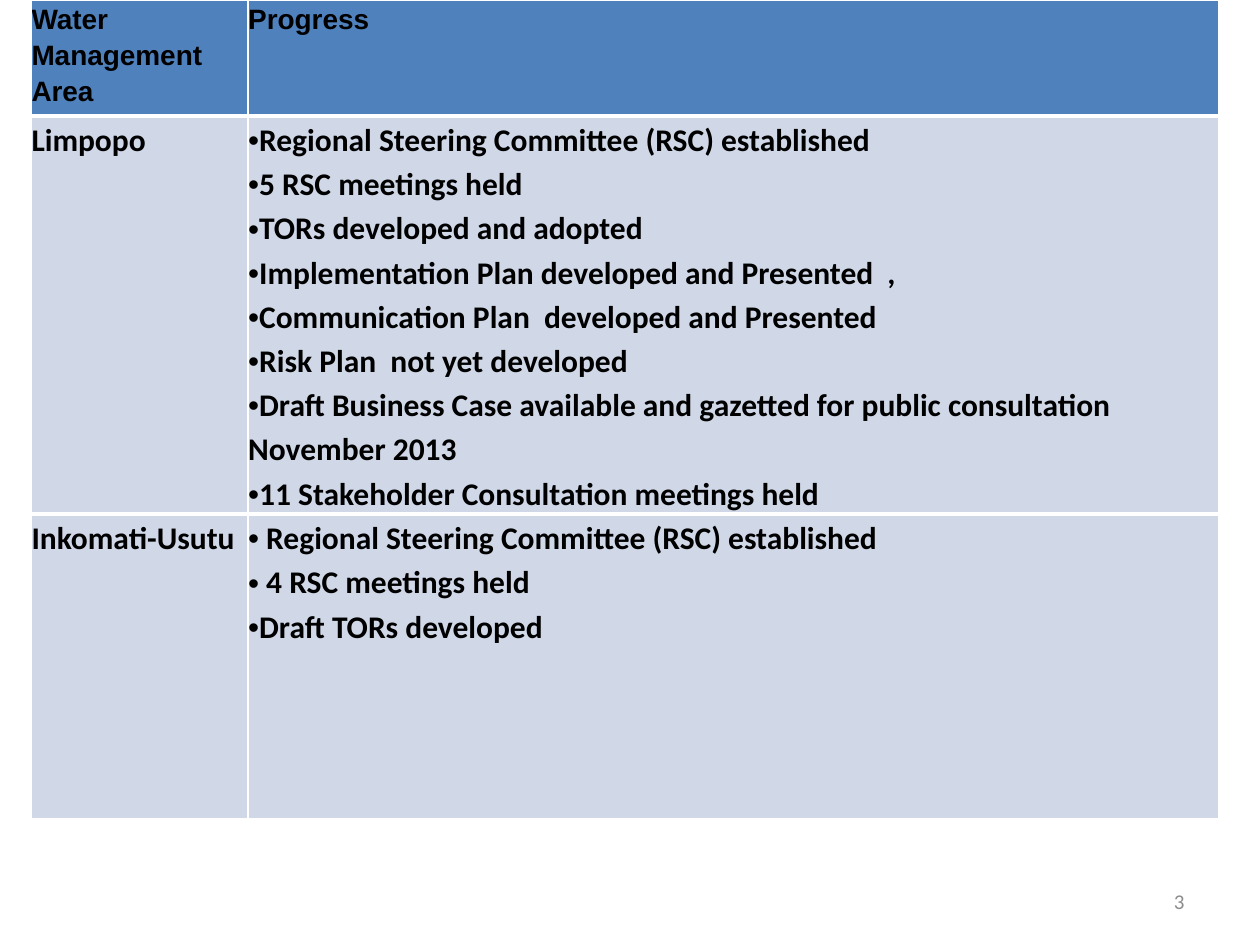
import pptx
import pptx.util
import pptx.dml.color
import pptx.enum.text
import pptx.oxml
import pptx.oxml.ns
from pptx.util import Inches

COLORS = {"header": "4F81BD", "body": "D0D8E8", "border": "FFFFFF",
          "text": "000000", "number": "8C8C8C"}
ROWS = [
    (["Water Management Area"], ["Progress"]),
    (["Limpopo"], [
        "Regional Steering Committee (RSC) established",
        "5 RSC meetings held",
        "TORs developed and adopted",
        "Implementation Plan developed and Presented  ,",
        "Communication Plan  developed and Presented",
        "Risk Plan  not yet developed",
        "Draft Business Case available and gazetted for public consultation November 2013",
        "11 Stakeholder Consultation meetings held",
    ]),
    (["Inkomati-Usutu"], [
        " Regional Steering Committee (RSC) established",
        " 4 RSC meetings held",
        "Draft TORs developed",
    ]),
]
COL_WIDTHS = [1.72, 7.7]
ROW_HEIGHTS = [0.85, 3.16, 2.43]


def format_run(r, font, size, color, bold):
    r.font.name = font
    r.font.size = pptx.util.Pt(size)
    r.font.bold = bold
    r.font.color.rgb = pptx.dml.color.RGBColor.from_string(COLORS[color])


def add_border(cell, side, width):
    cell._tc.get_or_add_tcPr().append(pptx.oxml.parse_xml(
        f'<a:{side} {pptx.oxml.ns.nsdecls("a")} w="{pptx.util.Pt(width)}"><a:solidFill>'
        f'<a:srgbClr val="{COLORS["border"]}"/></a:solidFill></a:{side}>'))


prs = pptx.Presentation()
prs.slide_width = Inches(10)
prs.slide_height = Inches(7.5)
s = prs.slides.add_slide(prs.slide_layouts[6])

sp = s.shapes.add_textbox(Inches(7.17), Inches(6.95), Inches(2.33), Inches(0.4))
tf = sp.text_frame
tf.word_wrap = True
tf.vertical_anchor = pptx.enum.text.MSO_ANCHOR.MIDDLE
tf.text = "3"
p = tf.paragraphs[0]
p.alignment = pptx.enum.text.PP_ALIGN.RIGHT
format_run(p.runs[0], "Calibri", 12, "number", False)

table = s.shapes.add_table(len(ROWS), len(COL_WIDTHS), Inches(0.25), Inches(0),
                           Inches(sum(COL_WIDTHS)), Inches(sum(ROW_HEIGHTS))).table
for column, width in zip(table.columns, COL_WIDTHS):
    column.width = Inches(width)
for row, height in zip(table.rows, ROW_HEIGHTS):
    row.height = Inches(height)

for i, row in enumerate(ROWS):
    header = i == 0
    for j, lines in enumerate(row):
        cell = table.cell(i, j)
        cell.margin_left = cell.margin_right = Inches(0)
        cell.margin_top = cell.margin_bottom = Inches(0)
        for side, width in (("lnL", 1), ("lnR", 1), ("lnT", 1 if header else 2.25), ("lnB", 2.25)):
            add_border(cell, side, width)
        cell.fill.solid()
        cell.fill.fore_color.rgb = pptx.dml.color.RGBColor.from_string(
            COLORS["header" if header else "body"])
        tf = cell.text_frame
        tf.text = "\n".join(lines)
        for p in tf.paragraphs:
            p.line_spacing = 1.15
            if j == 1 and not header:
                pPr = p._p.get_or_add_pPr()
                pPr.append(pptx.oxml.parse_xml(
                    f'<a:buFont {pptx.oxml.ns.nsdecls("a")} typeface="Arial"/>'))
                pPr.append(pptx.oxml.parse_xml(
                    f'<a:buChar {pptx.oxml.ns.nsdecls("a")} char="•"/>'))
            format_run(p.runs[0], "Arial" if header else "Calibri",
                       16 if header else 18, "text", True)

prs.save("out.pptx")
